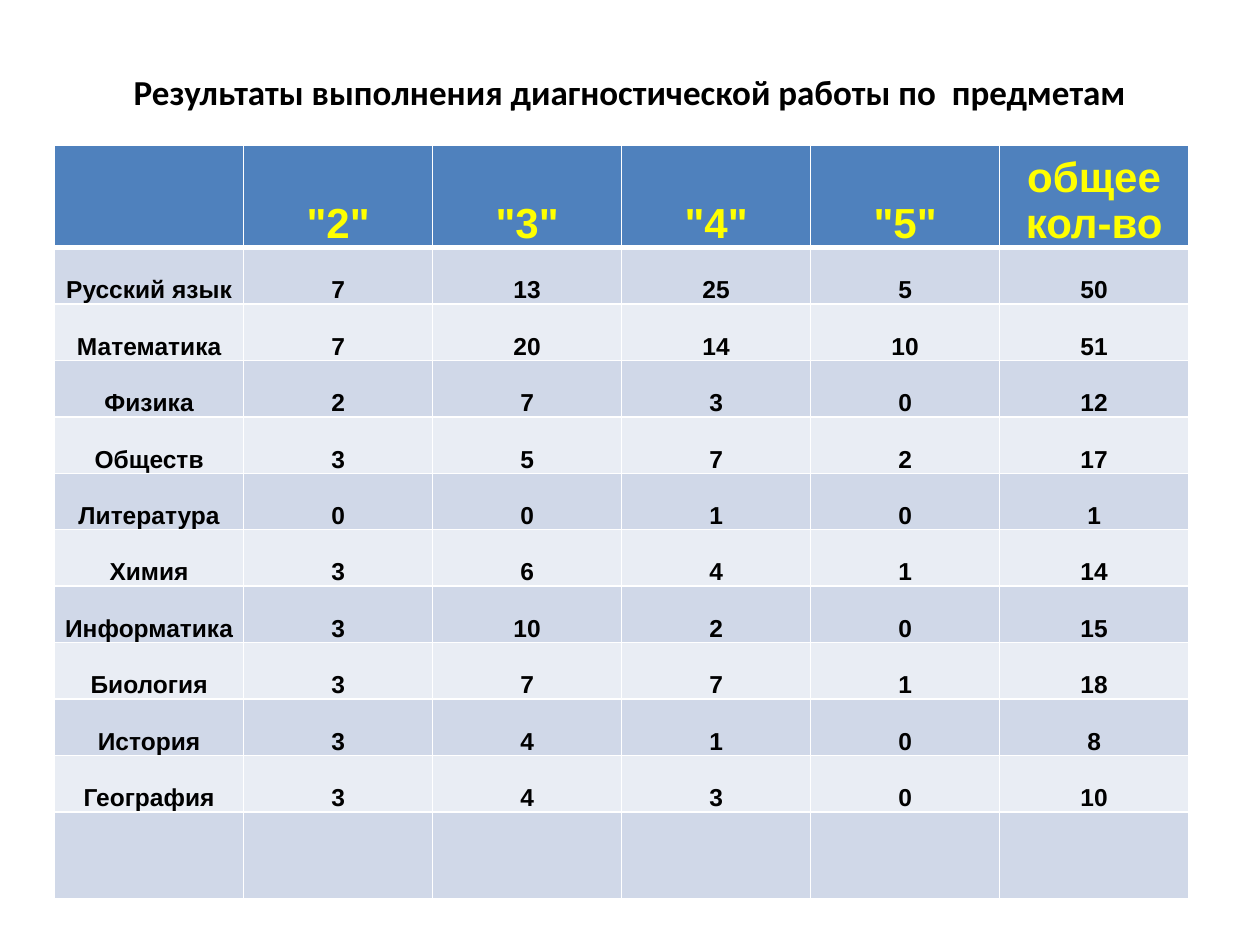
"""Build a slide with a table of diagnostic test results by school subject."""
from lxml import etree
from pptx import Presentation
from pptx.dml.color import RGBColor
from pptx.enum.text import MSO_ANCHOR, PP_ALIGN
from pptx.oxml.ns import qn
from pptx.util import Pt

CENTER = PP_ALIGN.CENTER
MIDDLE, BOTTOM = MSO_ANCHOR.MIDDLE, MSO_ANCHOR.BOTTOM

TITLE = "Результаты выполнения диагностической работы по  предметам"
HEADER = ("", '"2"', '"3"', '"4"', '"5"', "общее кол-во")
RESULTS = [
    ("Русский язык", 7, 13, 25, 5, 50),
    ("Математика", 7, 20, 14, 10, 51),
    ("Физика", 2, 7, 3, 0, 12),
    ("Обществ", 3, 5, 7, 2, 17),
    ("Литература", 0, 0, 1, 0, 1),
    ("Химия", 3, 6, 4, 1, 14),
    ("Информатика", 3, 10, 2, 0, 15),
    ("Биология", 3, 7, 7, 1, 18),
    ("История", 3, 4, 1, 0, 8),
    ("География", 3, 4, 3, 0, 10),
]
EMPTY_ROW = ("",) * len(HEADER)

THEME = {
    "title": {"name": "Calibri", "size": Pt(20), "bold": True, "color": "000000"},
    "header": {"name": "Arial", "size": Pt(24), "bold": True, "color": "FFFF00"},
    "body": {"name": "Arial", "size": Pt(14), "bold": True, "color": "000000"},
    "header_fill": "4F81BD",
    "band_fills": ("E9EDF4", "D0D8E8"),
    "border": "FFFFFF",
}
CELL_FORMAT = {
    "vertical_anchor": BOTTOM,
    "margin_left": Pt(0.75),
    "margin_right": Pt(0.75),
    "margin_top": Pt(0.75),
    "margin_bottom": Pt(0),
}
TITLE_FORMAT = {"word_wrap": True, "vertical_anchor": MIDDLE}

TITLE_PLACE = (Pt(36), Pt(21.6), Pt(648), Pt(61.2))
TABLE_LEFT, TABLE_TOP, COLUMN_WIDTH = Pt(31.2), Pt(83.2), Pt(108)
HEADER_HEIGHT, BODY_HEIGHT, LAST_HEIGHT = Pt(52.5), Pt(32.25), Pt(50)


def apply_format(target, values):
    for name, value in values.items():
        setattr(target, name, value)


def write_text(frame, text, style):
    para = frame.paragraphs[0]
    para.alignment = CENTER
    span = para.add_run()
    span.text = text
    font = {name: value for name, value in style.items() if name != "color"}
    apply_format(span.font, font)
    span.font.color.rgb = RGBColor.from_string(style["color"])


def add_borders(cell, bottom_width):
    properties = cell._tc.get_or_add_tcPr()
    widths = {"a:lnL": Pt(1), "a:lnR": Pt(1), "a:lnT": Pt(1), "a:lnB": bottom_width}
    for tag, width in widths.items():
        line = etree.SubElement(properties, qn(tag), w=str(int(width)))
        fill = etree.SubElement(line, qn("a:solidFill"))
        etree.SubElement(fill, qn("a:srgbClr"), val=THEME["border"])


def add_title(page):
    box = page.shapes.add_textbox(*TITLE_PLACE)
    apply_format(box.text_frame, TITLE_FORMAT)
    write_text(box.text_frame, TITLE, THEME["title"])


def add_results(page):
    rows = [HEADER, *RESULTS, EMPTY_ROW]
    heights = [HEADER_HEIGHT, *[BODY_HEIGHT] * len(RESULTS), LAST_HEIGHT]
    table = page.shapes.add_table(
        len(rows), len(HEADER), TABLE_LEFT, TABLE_TOP,
        COLUMN_WIDTH * len(HEADER), sum(heights),
    ).table
    for column in table.columns:
        column.width = COLUMN_WIDTH
    for index, (values, height) in enumerate(zip(rows, heights)):
        table.rows[index].height = height
        is_header = index == 0
        style = THEME["header" if is_header else "body"]
        fill = THEME["header_fill"] if is_header else THEME["band_fills"][index % 2]
        for column, value in enumerate(values):
            cell = table.cell(index, column)
            apply_format(cell, CELL_FORMAT)
            add_borders(cell, Pt(3) if is_header else Pt(1))
            cell.fill.solid()
            cell.fill.fore_color.rgb = RGBColor.from_string(fill)
            if value != "":
                write_text(cell.text_frame, str(value), style)


def main():
    deck = Presentation()
    deck.slide_width, deck.slide_height = Pt(720), Pt(540)
    page = deck.slides.add_slide(deck.slide_layouts[6])
    add_title(page)
    add_results(page)
    deck.save("out.pptx")


if __name__ == "__main__":
    main()
